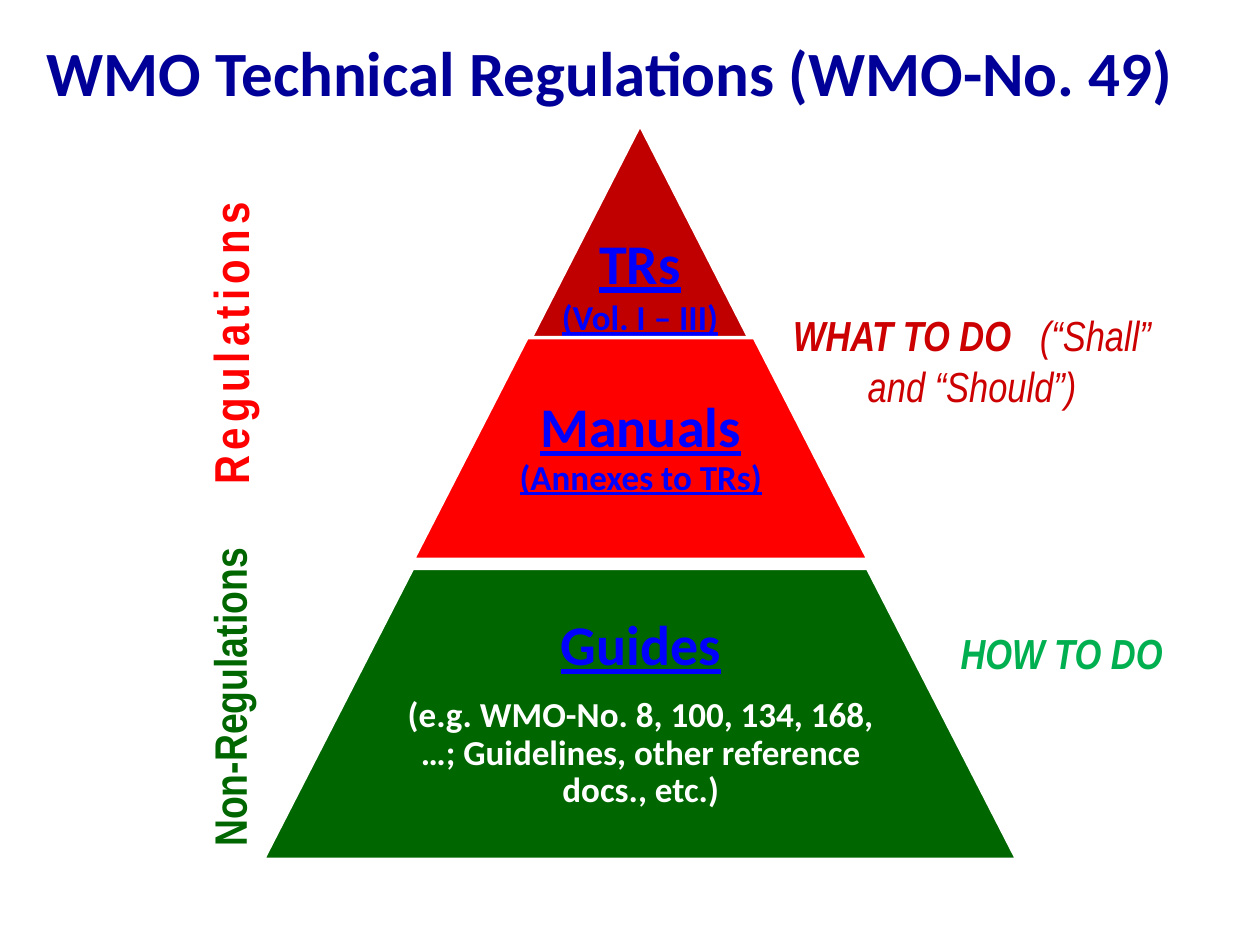
from pptx import Presentation
from pptx.dml.color import RGBColor
from pptx.enum.shapes import MSO_SHAPE
from pptx.enum.text import MSO_ANCHOR, MSO_AUTO_SIZE, PP_ALIGN
from pptx.util import Inches, Pt

TRAPEZOID = MSO_SHAPE.TRAPEZOID
MIDDLE, BOTTOM = MSO_ANCHOR.MIDDLE, MSO_ANCHOR.BOTTOM
LEFT, CENTER = PP_ALIGN.LEFT, PP_ALIGN.CENTER
FIT, FIXED = MSO_AUTO_SIZE.SHAPE_TO_FIT_TEXT, MSO_AUTO_SIZE.NONE

COLORS = {
    "title": "000099", "link": "0000FF", "white": "FFFFFF",
    "dark": "C00000", "red": "FF0000", "green": "006600",
    "shall": "CC0000", "how": "00B050",
}
SLOPE = 0.513


def rgb(name):
    return RGBColor.from_string(COLORS[name])


def style(font, face, size, color, bold=True, italic=False, line=False):
    font.name = face
    font.size = Pt(size)
    font.color.rgb = rgb(color)
    font.bold = bold
    font.italic = italic
    font.underline = line


def track(font, points):
    font._rPr.set("spc", str(points * 100))


def add_box(shapes, at):
    box = shapes.add_textbox(*map(Inches, at))
    box.text_frame.word_wrap = True
    return box.text_frame


def add_tier(shapes, at, color):
    tier = shapes.add_shape(TRAPEZOID, *map(Inches, at))
    tier.adjustments[0] = SLOPE
    tier.shadow.inherit = False
    tier.fill.solid()
    tier.fill.fore_color.rgb = rgb(color)
    tier.line.color.rgb = rgb("white")
    tier.line.width = Pt(2)


def add_text(shapes, at, head, note, color="link", gap=0, tight=0.9,
             anchor=MIDDLE, base=0.04):
    frame = add_box(shapes, at)
    frame.margin_left = frame.margin_right = frame.margin_top = Inches(0.04)
    frame.margin_bottom = Inches(base)
    frame.vertical_anchor = anchor
    for para, text, size, tint in (
        (frame.paragraphs[0], head, 32, "link"),
        (frame.add_paragraph(), note, 20, color),
    ):
        para.text = text
        para.alignment = CENTER
        para.line_spacing = tight
        style(para.font, "Calibri", size, tint, line=tint == "link")
    frame.paragraphs[0].space_after = Pt(gap)


def add_label(shapes, at, text, size, color, align=CENTER, turn=False,
              italic=False, space=0):
    frame = add_box(shapes, at)
    frame.auto_size = FIT
    if turn:
        frame._txBody.bodyPr.set("vert", "vert270")
    para = frame.paragraphs[0]
    para.text = text
    para.alignment = align
    style(para.font, "Arial Narrow", size, color, italic=italic)
    if space:
        track(para.runs[0].font, space)
    return para


def add_shall(shapes):
    para = add_label(shapes, (6.18, 2.41, 3.07, 0.91), "WHAT TO DO", 24,
                     "shall", italic=True)
    gap = para.add_run()
    gap.text = " "
    track(gap.font, 11)
    rest = para.add_run()
    rest.text = "(“Shall” and “Should”)"
    rest.font.bold = False


def add_title(slide):
    title = slide.shapes.title
    title.left, title.top, title.width, title.height = map(
        Inches, (0.27, 0.13, 9.53, 0.87))
    frame = title.text_frame
    frame.auto_size = FIXED
    frame.vertical_anchor = MIDDLE
    para = frame.paragraphs[0]
    para.text = "WMO Technical Regulations (WMO-No. 49)"
    para.alignment = LEFT
    style(para.font, "Calibri", 36, "title")


def main():
    deck = Presentation()
    deck.slide_width, deck.slide_height = Inches(10), Inches(7.5)
    slide = deck.slides.add_slide(deck.slide_layouts[5])
    shapes = slide.shapes
    add_title(slide)

    group = shapes.add_group_shape().shapes
    add_tier(group, (4.18, 0.99, 1.8, 1.76), "dark")
    add_text(group, (4.18, 0.99, 1.8, 1.76), "TRs", "(Vol. I – III)",
             tight=1, anchor=BOTTOM, base=0.07)
    add_tier(group, (3.28, 2.68, 3.61, 1.76), "red")
    add_text(group, (3.91, 2.68, 2.35, 1.76), "Manuals", "(Annexes to TRs)")
    add_tier(group, (2.09, 4.51, 5.98, 2.31), "green")
    add_text(group, (3.14, 4.51, 3.89, 2.31), "Guides",
             "(e.g. WMO-No. 8, 100, 134, 168, …; Guidelines, "
             "other reference docs., etc.)", "white", gap=11)

    add_label(shapes, (1.54, 1.15, 0.67, 3.15), "Regulations", 28, "red",
              turn=True, space=3)
    add_label(shapes, (1.55, 4.22, 0.64, 2.6), "Non-Regulations", 26, "green",
              align=LEFT, turn=True)
    add_shall(shapes)
    add_label(shapes, (7.44, 4.93, 1.97, 0.5), "HOW TO DO", 24, "how",
              italic=True)
    deck.save("out.pptx")


if __name__ == "__main__":
    main()
